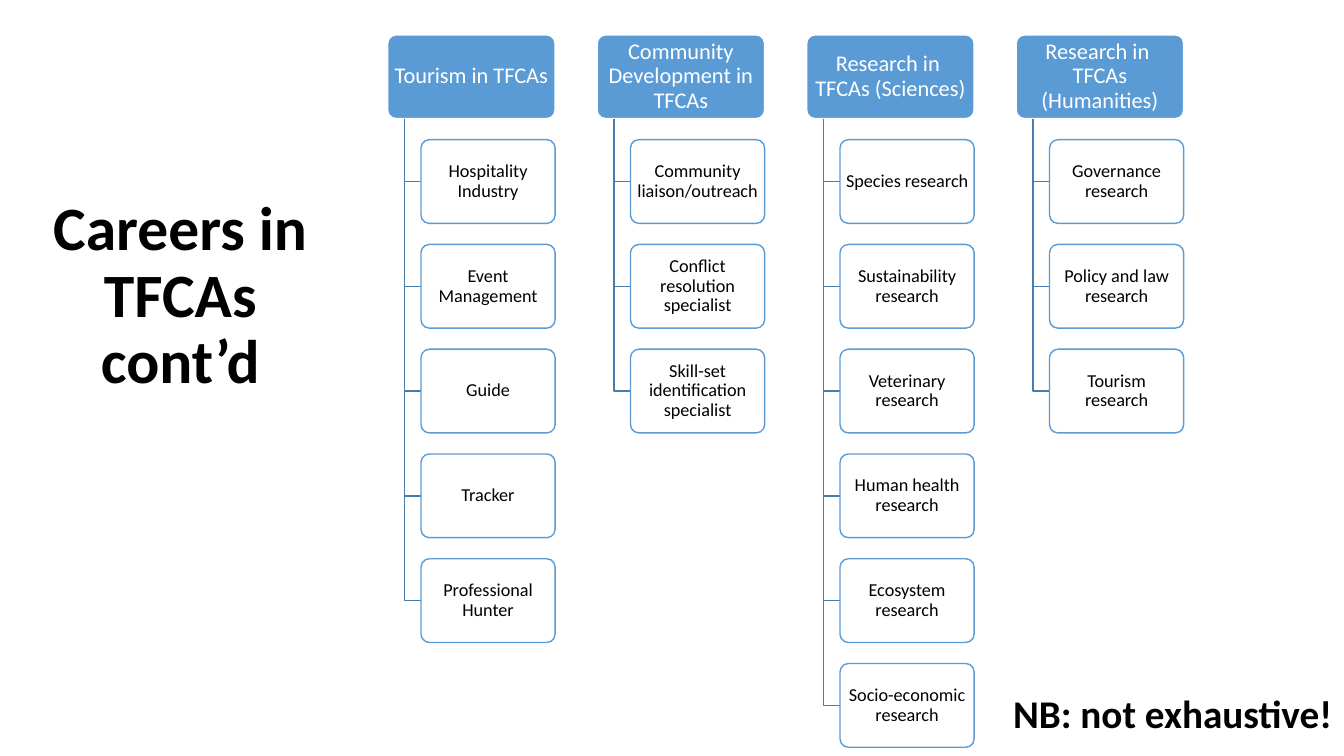
from pptx import Presentation
from pptx.dml.color import RGBColor
from pptx.enum.shapes import MSO_SHAPE
from pptx.enum.text import MSO_ANCHOR, PP_ALIGN
from pptx.util import Cm, Pt

ROUNDED = MSO_SHAPE.ROUNDED_RECTANGLE
MIDDLE = MSO_ANCHOR.MIDDLE
CENTER = PP_ALIGN.CENTER

FONT = "Calibri"
COLORS = {"blue": "5B9BD5", "branch": "497CAB", "white": "FFFFFF", "black": "000000"}

CAREERS = {
    "Tourism in TFCAs": [
        "Hospitality Industry", "Event Management", "Guide", "Tracker",
        "Professional Hunter",
    ],
    "Community Development in TFCAs": [
        "Community liaison/outreach", "Conflict resolution specialist",
        "Skill-set identification specialist",
    ],
    "Research in \nTFCAs (Sciences)": [
        "Species research", "Sustainability research", "Veterinary research",
        "Human health research", "Ecosystem research", "Socio-economic research",
    ],
    "Research in \nTFCAs (Humanities)": [
        "Governance research", "Policy and law research", "Tourism research",
    ],
}

COLUMN_PITCH = Cm(5.28)
COLUMN_WIDTH = Cm(4.22)
ROW_PITCH = Cm(2.64)
BOX_HEIGHT = Cm(2.11)
INDENT = Cm(0.84)


def rgb(name):
    return RGBColor.from_string(COLORS[name])


def write(shape, text, size, color, bold=False):
    """Centre one paragraph of text in the shape."""
    frame = shape.text_frame
    frame.word_wrap = True
    frame.vertical_anchor = MIDDLE
    paragraph = frame.paragraphs[0]
    paragraph.text = text
    paragraph.alignment = CENTER
    paragraph.line_spacing = 0.9
    paragraph.font.name = FONT
    paragraph.font.size = Pt(size)
    paragraph.font.bold = bold
    paragraph.font.color.rgb = rgb(color)


def add_heading(slide, text, size, left, top, width, height):
    heading = slide.shapes.add_textbox(left, top, width, height)
    write(heading, text, size, "black", bold=True)


def add_box(slide, text, size, left, top, width, fill, line, color):
    box = slide.shapes.add_shape(ROUNDED, left, top, width, BOX_HEIGHT)
    box.adjustments[0] = 0.1
    box.shadow.inherit = False
    box.fill.solid()
    box.fill.fore_color.rgb = rgb(fill)
    box.line.color.rgb = rgb(line)
    box.line.width = Pt(1)
    frame = box.text_frame
    frame.margin_left = frame.margin_right = Cm(0.08)
    frame.margin_top = frame.margin_bottom = Cm(0.05)
    write(box, text, size, color)


def add_branch(slide, left, top, right, bottom):
    """Draw a line down from the field, then across to the career."""
    builder = slide.shapes.build_freeform(left, top)
    builder.add_line_segments([(left, bottom), (right, bottom)], close=False)
    branch = builder.convert_to_shape()
    branch.shadow.inherit = False
    branch.fill.background()
    branch.line.color.rgb = rgb("branch")
    branch.line.width = Pt(1)


def add_career_column(slide, field, careers, left, top, width):
    add_box(slide, field, 16, left, top, width, "blue", "white", "white")
    career_left = left + INDENT
    for row, career in enumerate(careers, start=1):
        career_top = top + row * ROW_PITCH
        add_branch(slide, left + INDENT // 2, top + BOX_HEIGHT,
                   career_left, career_top + BOX_HEIGHT // 2)
        add_box(slide, career, 13, career_left, career_top, width - INDENT,
                "white", "blue", "black")


def add_career_chart(slide, left, top):
    for column, (field, careers) in enumerate(CAREERS.items()):
        add_career_column(slide, field, careers,
                          left + column * COLUMN_PITCH, top, COLUMN_WIDTH)


def main():
    deck = Presentation()
    deck.slide_width, deck.slide_height = Cm(33.87), Cm(19.05)
    slide = deck.slides.add_slide(deck.slide_layouts[6])
    add_heading(slide, "Careers in TFCAs cont’d", 44,
                Cm(1.09), Cm(4.47), Cm(6.91), Cm(6.05))
    add_career_chart(slide, Cm(9.77), Cm(0.88))
    add_heading(slide, "NB: not exhaustive!", 28,
                Cm(22.45), Cm(17.2), Cm(14.2), Cm(1.65))
    deck.save("out.pptx")


if __name__ == "__main__":
    main()
